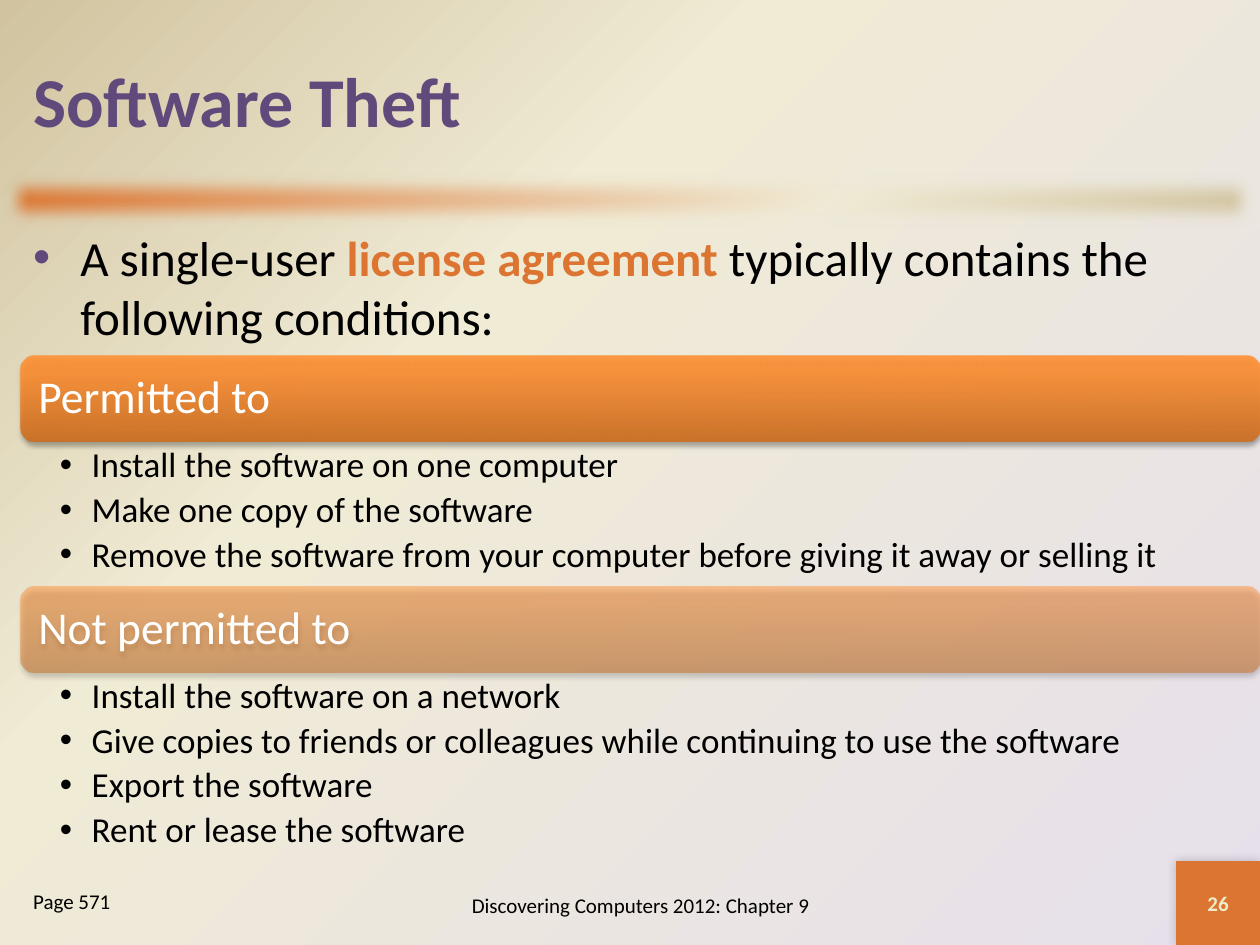
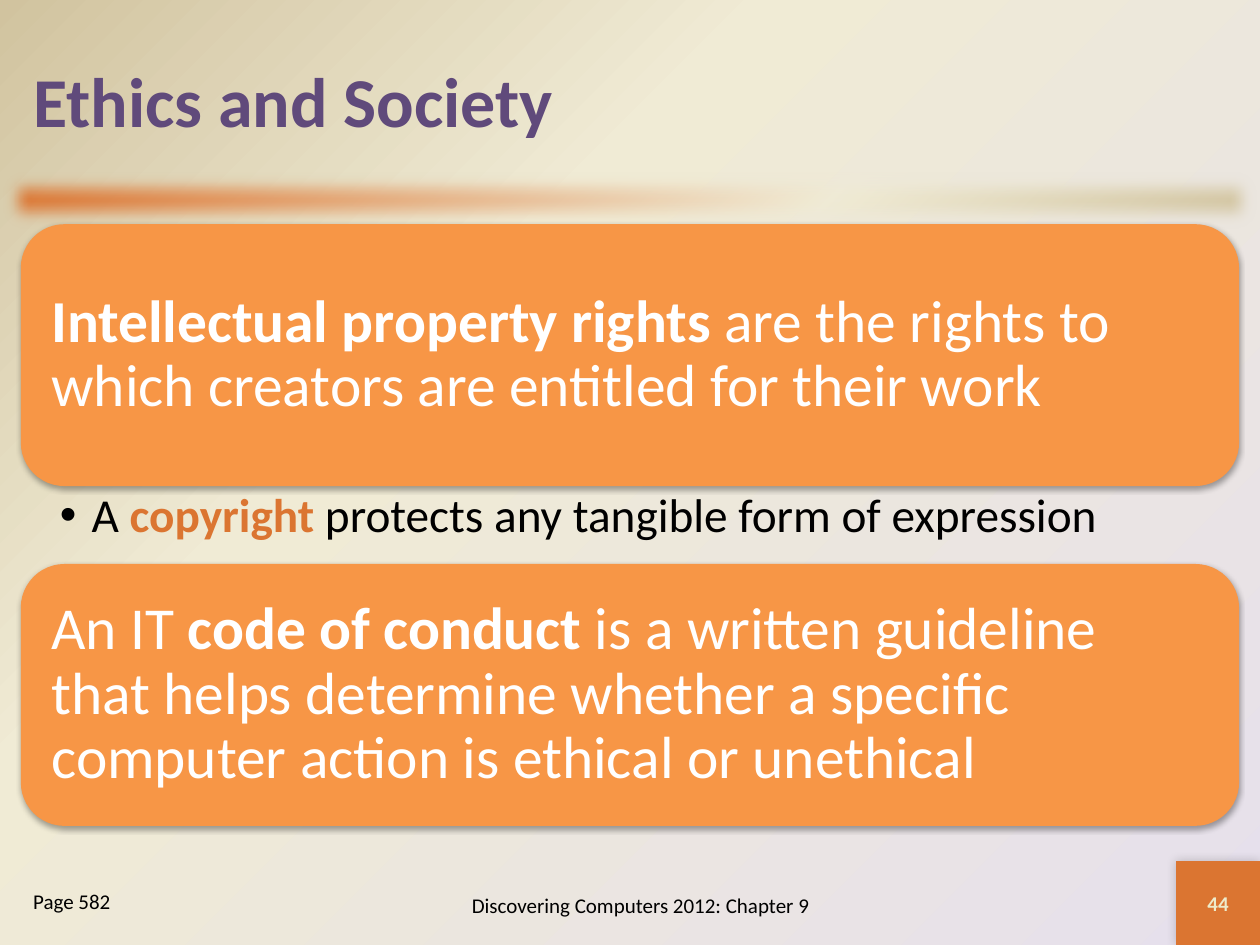
from pptx import Presentation
from pptx.dml.color import RGBColor
from pptx.enum.shapes import MSO_SHAPE
from pptx.enum.text import MSO_ANCHOR, MSO_AUTO_SIZE, PP_ALIGN
from pptx.oxml import parse_xml
from pptx.oxml.ns import nsdecls, qn
from pptx.util import Cm, Pt

FONT = "Calibri"
BLACK, WHITE = "000000", "FFFFFF"
RUST, PLUM, CREAM, AMBER = "DB7531", "604A7B", "EEEBCA", "F79646"
SAND = [(65, "F0EBD5"), (100, "D1C39F")]
GLOSS = [(0, "CC6E20"), (80, "FF9034"), (100, "FF9136")]
FOOTER = "Discovering Computers 2012: Chapter 9"
LEFT, WIDE = 0.42, 24.56

SLIDES = [
    {
        "title": "Software Theft", "page": "Page 571", "number": "26",
        "intro": "A single-user *license agreement* typically contains the following conditions:",
        "top": 7.18, "width": 24.98, "height": 1.73, "inset": 0.27,
        "size": 26, "small": 20,
        "cards": [
            ("Permitted to", 90, 2.92, [
                "Install the software on one computer",
                "Make one copy of the software",
                "Remove the software from your computer before giving it away or selling it"]),
            ("Not permitted to", 50, 3.81, [
                "Install the software on a network",
                "Give copies to friends or colleagues while continuing to use the software",
                "Export the software",
                "Rent or lease the software"]),
        ],
    },
    {
        "title": "Ethics and Society", "page": "Page 582", "number": "44",
        "intro": None,
        "top": 4.52, "width": WIDE, "height": 5.28, "inset": 0.36,
        "size": 34, "small": 27,
        "cards": [
            ("*Intellectual property rights* are the rights to which creators are entitled for their work",
             None, 1.57, ["A *copyright* protects any tangible form of expression"]),
            ("An IT *code of conduct* is a written guideline that helps determine whether "
             "a specific computer action is ethical or unethical", None, 0, []),
        ],
    },
]


def rgb(code):
    return RGBColor.from_string(code)


def blend(fill, root, stops, way, alpha=100):
    fill.gradient()
    marks = "".join(
        f'<a:gs pos="{pos * 1000}"><a:srgbClr val="{code}">'
        f'<a:alpha val="{alpha * 1000}"/></a:srgbClr></a:gs>' for pos, code in stops)
    old = root.find(".//" + qn("a:gradFill"))
    old.getparent().replace(old, parse_xml(
        f'<a:gradFill {nsdecls("a")} rotWithShape="1"><a:gsLst>{marks}</a:gsLst>{way}</a:gradFill>'))


def linear(angle):
    return f'<a:lin ang="{angle * 60000}" scaled="0"/>'


def effect(shape, tag, attrs, inner=""):
    node = shape.element.spPr.find(qn("a:effectLst"))
    node.append(parse_xml(f'<a:{tag} {nsdecls("a")} {attrs}>{inner}</a:{tag}>'))


def shadow(shape, alpha, blur, dist, angle):
    effect(shape, "outerShdw",
           f'blurRad="{Pt(blur)}" dist="{Pt(dist)}" dir="{angle * 60000}" rotWithShape="0"',
           f'<a:srgbClr val="{BLACK}"><a:alpha val="{alpha * 1000}"/></a:srgbClr>')


def block(slide, kind, box, color=None):
    shape = slide.shapes.add_shape(kind, *map(Cm, box))
    shape.shadow.inherit = False
    shape.line.fill.background()
    if color:
        shape.fill.solid()
        shape.fill.fore_color.rgb = rgb(color)
    return shape


def bullet(para, indent, color):
    props = para._p.get_or_add_pPr()
    props.set("marL", str(Cm(indent)))
    props.set("indent", str(-Cm(indent)))
    for inner in (f'<a:buClr {nsdecls("a")}><a:srgbClr val="{color}"/></a:buClr>',
                  f'<a:buFont {nsdecls("a")} typeface="Arial"/>',
                  f'<a:buChar {nsdecls("a")} char="•"/>'):
        props.append(parse_xml(inner))


def write(shape, lines, size, color, strong=None, bold=False, align=PP_ALIGN.LEFT,
          anchor=MSO_ANCHOR.TOP, inset=(0.25, 0.13, 0.25, 0.13), dot=None, pitch=1, after=0):
    frame = shape.text_frame
    frame.word_wrap = True
    frame.auto_size = MSO_AUTO_SIZE.NONE
    frame.vertical_anchor = anchor
    (frame.margin_left, frame.margin_top,
     frame.margin_right, frame.margin_bottom) = map(Cm, inset)
    for i, line in enumerate(lines):
        para = frame.add_paragraph() if i else frame.paragraphs[0]
        if dot:
            bullet(para, *dot)
        para.alignment = align
        para.line_spacing = pitch
        para.space_before = Pt(0)
        para.space_after = Pt(after)
        for j, part in enumerate(line.split("*")):
            if not part:
                continue
            run = para.add_run()
            run.text = part
            font = run.font
            font.name, font.size = FONT, Pt(size)
            font.bold = bold or j % 2 == 1
            font.color.rgb = rgb(strong if strong and j % 2 else color)


def place(shape, *box):
    shape.left, shape.top, shape.width, shape.height = map(Cm, box)
    return shape


def label(slide, *box):
    return slide.shapes.add_textbox(*map(Cm, box))


def frame(slide, data):
    title = place(slide.shapes.title, LEFT, 0.42, WIDE, 3.18)
    write(title, [data["title"]], 40, PLUM, bold=True, anchor=MSO_ANCHOR.MIDDLE)
    bar = block(slide, MSO_SHAPE.RECTANGLE, (0, 3.39, 25.4, 1.27))
    blend(bar.fill, bar.element, [(0, RUST)] + SAND, linear(45))
    effect(bar, "softEdge", f'rad="{Pt(10)}"')
    badge = block(slide, MSO_SHAPE.RECTANGLE, (23.71, 17.36, 1.69, 1.69), RUST)
    shadow(badge, 20, 6, 0, 225)
    mid = {"align": PP_ALIGN.CENTER, "anchor": MSO_ANCHOR.MIDDLE}
    write(badge, [data["number"]], 12, CREAM, bold=True, **mid)
    write(label(slide, 7.62, 17.55, 10.59, 1.4), [FOOTER], 12, BLACK, **mid)
    write(label(slide, LEFT, 17.78, 4.65, 1.27), [data["page"]], 12, BLACK)


def stack(slide, data):
    top, width, height = data["top"], data["width"], data["height"]
    size, small = data["size"], data["small"]
    for head, alpha, room, items in data["cards"]:
        card = block(slide, MSO_SHAPE.ROUNDED_RECTANGLE, (LEFT, top, width, height), AMBER)
        if alpha:
            blend(card.fill, card.element, GLOSS, linear(270), alpha)
        shadow(card, 35, 3.1, 1.8, 90)
        write(card, [head], size, WHITE, anchor=MSO_ANCHOR.MIDDLE,
              inset=[data["inset"]] * 4, pitch=0.9)
        top += height
        if items:
            write(label(slide, LEFT, top, width, room), items, small, BLACK, RUST,
                  inset=(0.79, 0.11, 0.5, 0.11), dot=(0.64, BLACK), pitch=0.9, after=small * 0.2)
        top += room


def main():
    prs = Presentation()
    prs.slide_width, prs.slide_height = Cm(25.4), Cm(19.05)
    master = prs.slide_master
    blend(master.background.fill, master.element, [(0, "E6E0EC")] + SAND,
          '<a:path path="circle"><a:fillToRect l="100000" t="100000"/></a:path>')
    for data in SLIDES:
        slide = prs.slides.add_slide(prs.slide_layouts[1 if data["intro"] else 5])
        frame(slide, data)
        if data["intro"]:
            body = place(slide.placeholders[1], LEFT, 4.45, WIDE, 12.9)
            write(body, [data["intro"]], 28, BLACK, RUST, dot=(0.95, PLUM))
        stack(slide, data)
    prs.save("out.pptx")


if __name__ == "__main__":
    main()
